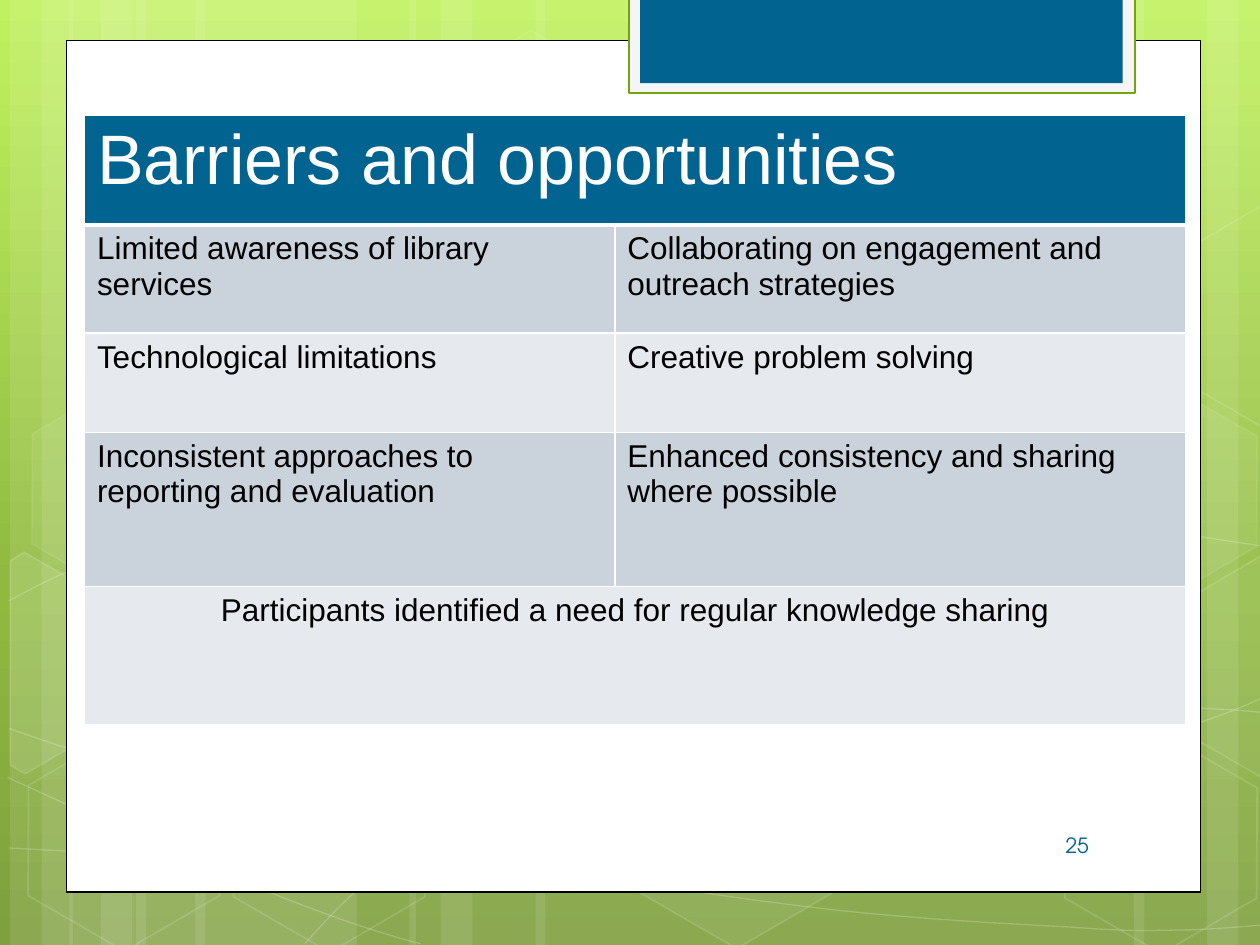
from copy import deepcopy
from math import cos, radians, sin

from lxml import etree
from pptx import Presentation
from pptx.dml.color import RGBColor
from pptx.enum.shapes import MSO_SHAPE
from pptx.enum.text import MSO_ANCHOR, PP_ALIGN
from pptx.oxml.ns import qn
from pptx.util import Inches, Pt

RECTANGLE, HEXAGON = MSO_SHAPE.RECTANGLE, MSO_SHAPE.HEXAGON
LEFT, CENTER, RIGHT = PP_ALIGN.LEFT, PP_ALIGN.CENTER, PP_ALIGN.RIGHT
MIDDLE = MSO_ANCHOR.MIDDLE
TILT = 30
COLORS = {
    "top": "C1F15E", "middle": "90BA3F", "bottom": "7FA03E",
    "white": "FFFFFF", "black": "000000", "blue": "006390",
    "frame": "F5F5F5", "green": "74A50F",
    "dark band": "CAD2DB", "light band": "E6EAEE",
}


def paint(shape, fill=None, line=None, width=1, fill_alpha=100, line_alpha=100):
    """Set fill and outline; the alphas are percentages of opacity."""
    shape.shadow.inherit = False
    for part, color, alpha in ((shape.fill, fill, fill_alpha), (shape.line.fill, line, line_alpha)):
        if color is None:
            part.background()
            continue
        part.solid()
        part.fore_color.rgb = RGBColor.from_string(COLORS[color])
        if alpha < 100:
            color_element = list(shape.element.spPr.iter(qn("a:srgbClr")))[-1]
            etree.SubElement(color_element, qn("a:alpha"), val=str(alpha * 1000))
    if line:
        shape.line.width = Pt(width)


def write(text_frame, text, size=18, color="black", font="Arial", align=LEFT):
    paragraph = text_frame.paragraphs[0]
    paragraph.alignment = align
    run = paragraph.add_run()
    run.text = text
    run.font.size, run.font.name = Pt(size), font
    run.font.color.rgb = RGBColor.from_string(COLORS[color])


presentation = Presentation()
presentation.slide_width, presentation.slide_height = Inches(10), Inches(7.5)
slide = presentation.slides.add_slide(presentation.slide_layouts[6])
shapes = slide.shapes

# Background gradient, light at the top
background = slide.background.fill
background.gradient()
background.gradient_angle = 270
stop_list = next(slide.element.iter(qn("a:gsLst")))
stop_list.insert(1, deepcopy(stop_list[0]))
for stop, position, name in zip(background.gradient_stops, (0, 0.62, 1), ("top", "middle", "bottom")):
    stop.position = position
    stop.color.rgb = RGBColor.from_string(COLORS[name])

# Vertical stripes: three repeating groups and one at the right edge
stripes = []
for left, width in ((1.08, 1.75), (1.55, 1.75)):
    stripes += [(left, width), (left - 1, 0.5), (left - 0.75, 0.83)]
stripes += [(7.33, 1.75), (9.58, 0.5), (9, 0.83), (4.25, 3.08), (3.25, 0.5), (3.5, 0.83)]
for left, width in stripes:
    stripe = shapes.add_shape(RECTANGLE, Inches(left), 0, Inches(width), presentation.slide_height)
    paint(stripe, "white", fill_alpha=10)

# Sweeping curves: a start point, then two control points and an end per segment
curves = [
    [(0.07, 6.73), (0.61, 6.76), (1.15, 6.79), (1.9, 6.78), (2.65, 6.77), (3.58, 6.75), (4.58, 6.65),
     (5.58, 6.55), (7, 6.36), (7.92, 6.17), (8.83, 5.98), (9.77, 5.68), (10.07, 5.51)],
    [(0.07, 4.77), (0.36, 4.61), (0.65, 4.46), (1.21, 4.31), (1.78, 4.16), (2.59, 3.94), (3.47, 3.87),
     (4.36, 3.8), (5.44, 3.79), (6.54, 3.87), (7.64, 3.95), (9.47, 4.26), (10.07, 4.34)],
    [(0.06, 6.17), (1.27, 6.72), (2.47, 7.27), (3.34, 7.49)],
    [(0.07, 5.78), (0.38, 5.89), (0.7, 6), (1.28, 6.16), (1.86, 6.31), (2.73, 6.56), (3.57, 6.73),
     (4.4, 6.9), (5.45, 7.08), (6.28, 7.18), (7.11, 7.29), (8, 7.33), (8.53, 7.36),
     (9.05, 7.4), (9.19, 7.38), (9.45, 7.38), (9.71, 7.37), (9.89, 7.35), (10.07, 7.34)],
    [(2.42, 7.49), (2.6, 7.29), (2.78, 7.09), (3.02, 6.91), (3.26, 6.73), (3.6, 6.53), (3.88, 6.39),
     (4.16, 6.25), (4.33, 6.19), (4.7, 6.09), (5.06, 5.99), (5.73, 5.85), (6.08, 5.78),
     (6.44, 5.71), (6.49, 5.71), (6.8, 5.69), (7.11, 5.66), (7.6, 5.63), (7.94, 5.62),
     (8.29, 5.61), (8.86, 5.62), (8.86, 5.62), (9.08, 5.62), (9.31, 5.62), (9.53, 5.62),
     (9.71, 5.63), (9.88, 5.64), (9.97, 5.65), (10.06, 5.66), (10.03, 5.65), (10.06, 5.66)],
]
for curve in curves:
    points = [(Inches(x), Inches(y)) for x, y in curve]
    builder = shapes.build_freeform(*points[0])
    builder.add_line_segments(points[1:], close=False)
    sweep = builder.convert_to_shape()
    # Join every three straight steps into one cubic segment
    outline = next(sweep.element.iter(qn("a:path")))
    steps = outline.findall(qn("a:lnTo"))
    for first in range(0, len(steps), 3):
        segment = etree.SubElement(outline, qn("a:cubicBezTo"))
        for step in steps[first:first + 3]:
            segment.append(step[0])
            outline.remove(step)
    paint(sweep, line="white", width=0.75, line_alpha=20)

# Honeycomb: left, top, fill opacity, line opacity
for left, top, fill_alpha, line_alpha in (
    (3.34, 0.36, 4, 8), (4.97, 5.89, 6, 12), (0.11, 5.91, 0, 12), (0.14, 3.12, 7, 8), (1.74, 5.92, 0, 12),
    (7.53, 4.53, 10, 12), (8.34, 5.93, 0, 12), (8.34, 3.14, 7, 8),
):
    hexagon = shapes.add_shape(HEXAGON, Inches(left), Inches(top), Inches(1.75), Inches(1.52))
    hexagon.rotation = TILT
    hexagon.adjustments[0], hexagon.adjustments[1] = 0.285, 1.155
    paint(hexagon, "white" if fill_alpha else None, "white", 1, fill_alpha, line_alpha)

# Tilted hexagons cut off at the slide's edges: fill opacity, centre, corners as they appear
cosine, sine = cos(radians(TILT)), sin(radians(TILT))
for fill_alpha, (center_x, center_y), corners in (
    (10, (0.36, 5.35), [(0.08, 4.45), (0.19, 4.38), (0.96, 4.82), (0.95, 5.7), (0.2, 6.14), (0.08, 6.07)]),
    (4, (9.85, 5.2), [(9.26, 4.85), (10.01, 4.41), (10.09, 4.46), (10.09, 6.13), (10.02, 6.17), (9.26, 5.73)]),
    (0, (9.85, 2.41), [(9.26, 2.07), (10.01, 1.63), (10.1, 1.68), (10.09, 3.35), (10.02, 3.39), (9.26, 2.95)]),
):
    points = [(Inches(center_x + (x - center_x) * cosine + (y - center_y) * sine),
               Inches(center_y - (x - center_x) * sine + (y - center_y) * cosine)) for x, y in corners]
    builder = shapes.build_freeform(*points[0])
    builder.add_line_segments(points[1:], close=True)
    cut_hexagon = builder.convert_to_shape()
    cut_hexagon.rotation = TILT
    paint(cut_hexagon, "white" if fill_alpha else None, "white", 1, fill_alpha, 12)

# White panel and the blue tab hanging from the top
for box, fill, line, width in (
    ((0.53, 0.32, 9, 6.76), "white", "black", 0.75),
    ((4.99, -0.02, 4.02, 0.76), "frame", "green", 1.25),
    ((5.08, -0.02, 3.83, 0.68), "blue", None, 0),
):
    paint(shapes.add_shape(RECTANGLE, *map(Inches, box)), fill, line, width)

# Table of barriers and opportunities
rows = [
    ("Barriers and opportunities",),
    ("Limited awareness of library services", "Collaborating on engagement and outreach strategies"),
    ("Technological limitations", "Creative problem solving"),
    ("Inconsistent approaches to reporting and evaluation", "Enhanced consistency and sharing where possible"),
    ("Participants identified a need for regular knowledge sharing",),
]
column_widths = (4.21, 4.53)
row_heights = (0.87, 0.86, 0.79, 1.22, 1.1)
table = shapes.add_table(len(rows), 2, Inches(0.67), Inches(0.915),
                         Inches(sum(column_widths)), Inches(sum(row_heights))).table
for column, width in zip(table.columns, column_widths):
    column.width = Inches(width)
for row, height in zip(table.rows, row_heights):
    row.height = Inches(height)

for row_index, texts in enumerate(rows):
    if len(texts) == 1:
        table.cell(row_index, 0).merge(table.cell(row_index, 1))
    header = row_index == 0
    band = "blue" if header else ("light band", "dark band")[row_index % 2]
    for column_index in range(2):
        cell = table.cell(row_index, column_index)
        properties = cell._tc.get_or_add_tcPr()
        for side in "LRTB":
            thick = (row_index, side) in ((0, "B"), (1, "T"))
            border = etree.SubElement(properties, qn(f"a:ln{side}"), w=str(Pt(3 if thick else 1)))
            solid = etree.SubElement(border, qn("a:solidFill"))
            etree.SubElement(solid, qn("a:srgbClr"), val=COLORS["white"])
        cell.fill.solid()
        cell.fill.fore_color.rgb = RGBColor.from_string(COLORS[band])
    for column_index, text in enumerate(texts):
        write(table.cell(row_index, column_index).text_frame, text, size=40 if header else 18,
              color="white" if header else "black", align=CENTER if row_index == len(rows) - 1 else LEFT)

# Slide number
number = shapes.add_textbox(Inches(7.28), Inches(6.51), Inches(1.46), Inches(0.4)).text_frame
number.word_wrap = True
number.vertical_anchor = MIDDLE
write(number, "25", size=12, color="blue", font="TeX Gyre Adventor", align=RIGHT)

presentation.save("out.pptx")
